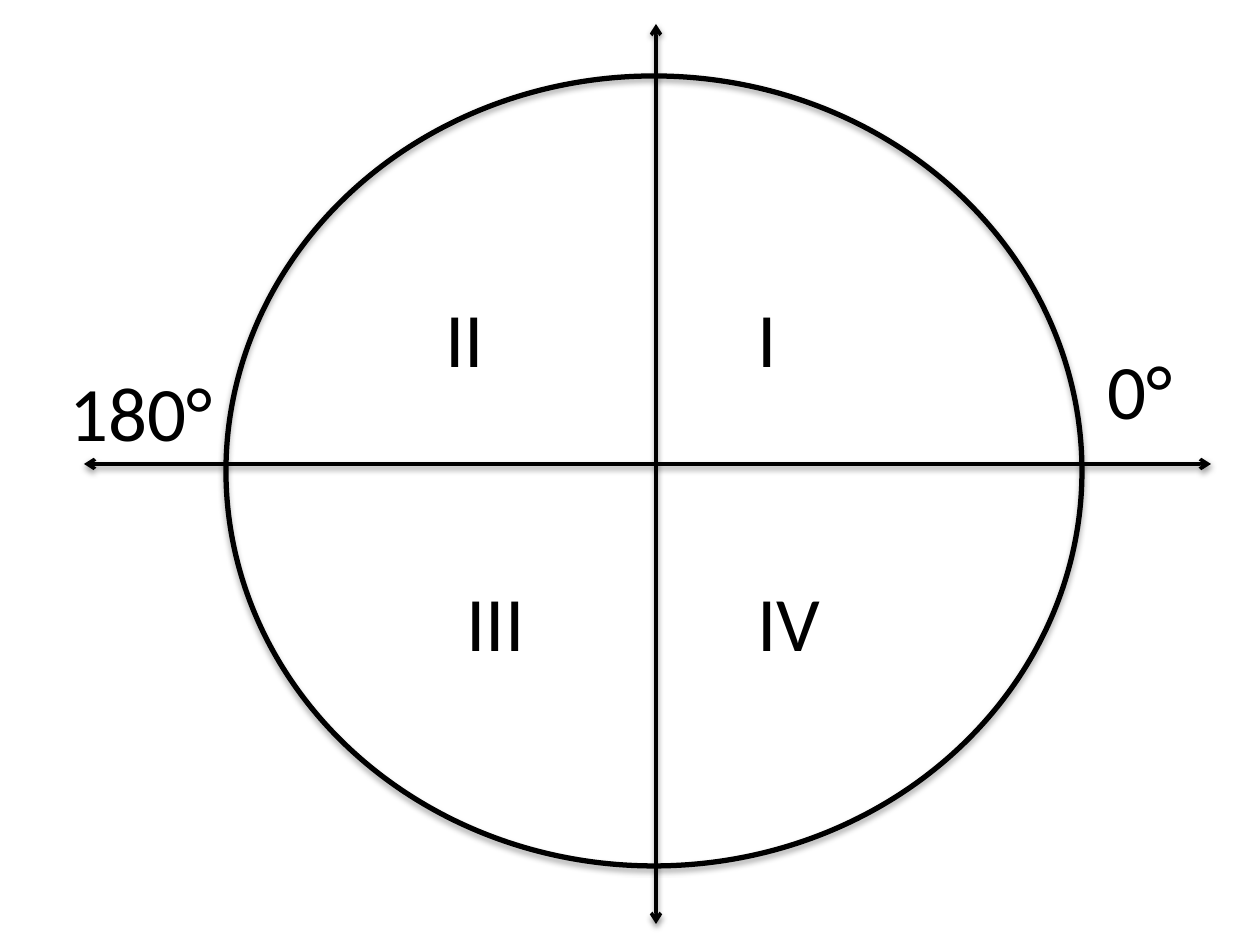
from dataclasses import dataclass

from lxml import etree
from pptx import Presentation
from pptx import util as u
from pptx.dml.color import RGBColor
from pptx.enum import shapes, text
from pptx.oxml.ns import qn

PX = 914400 / 126
BLACK = RGBColor(0, 0, 0)
FONT = "Calibri"
FONT_SIZE = u.Pt(44)
LABEL_HEIGHT = 106


@dataclass
class Axis:
    x1: int
    y1: int
    x2: int
    y2: int


@dataclass
class Label:
    caption: str
    x: int
    y: int
    width: int
    wrap: bool = False


UPPER_ROW, LOWER_ROW = 284, 568
RIGHT_COLUMN = 745

AXES = [Axis(84, 464, 1211, 464), Axis(656, 24, 656, 924)]
LABELS = [
    Label("I", RIGHT_COLUMN, UPPER_ROW, 121, wrap=True),
    Label("II", 433, UPPER_ROW, 64),
    Label("III", 454, LOWER_ROW, 84),
    Label("IV", RIGHT_COLUMN, LOWER_ROW, 89),
    Label("0°", 1095, 336, 91),
    Label("180°", 57, 358, 170),
]


def px(value: int) -> int:
    return round(value * PX)


def add_shadow(sp, distance: float, opacity: int) -> None:
    """Give a line or outline a soft shadow that falls straight down."""
    effects = etree.SubElement(sp._element.spPr, qn("a:effectLst"))
    shadow = etree.SubElement(
        effects, qn("a:outerShdw"), blurRad=str(u.Pt(3.1)),
        dist=str(u.Pt(distance)), dir="5400000", rotWithShape="0")
    color = etree.SubElement(shadow, qn("a:srgbClr"), val=str(BLACK))
    etree.SubElement(color, qn("a:alpha"), val=str(opacity * 1000))


def add_circle(s, x: int, y: int, width: int, height: int) -> None:
    sp = s.shapes.add_shape(shapes.MSO_SHAPE.OVAL, px(x), px(y), px(width), px(height))
    sp.fill.background()
    sp.line.color.rgb = BLACK
    sp.line.width = u.Pt(3)
    add_shadow(sp, 1.8, 35)


def add_axis(s, axis: Axis) -> None:
    sp = s.shapes.add_connector(
        shapes.MSO_CONNECTOR.STRAIGHT,
        px(axis.x1), px(axis.y1), px(axis.x2), px(axis.y2))
    sp.line.color.rgb = BLACK
    sp.line.width = u.Pt(2)
    ln = sp.line._get_or_add_ln()
    for end in ("a:headEnd", "a:tailEnd"):
        etree.SubElement(ln, qn(end), type="arrow")
    add_shadow(sp, 1.6, 38)


def add_label(s, label: Label) -> None:
    sp = s.shapes.add_textbox(
        px(label.x), px(label.y), px(label.width), px(LABEL_HEIGHT))
    tf = sp.text_frame
    tf.word_wrap = label.wrap
    tf.auto_size = text.MSO_AUTO_SIZE.SHAPE_TO_FIT_TEXT
    tf.text = label.caption
    font = tf.paragraphs[0].runs[0].font
    font.name = FONT
    font.size = FONT_SIZE
    font.color.rgb = BLACK


def main() -> None:
    prs = Presentation()
    prs.slide_width, prs.slide_height = px(1260), px(945)
    s = prs.slides.add_slide(prs.slide_layouts[6])

    # Circle and its axes
    add_circle(s, 226, 76, 856, 790)
    for axis in AXES:
        add_axis(s, axis)

    # Quadrant numerals and angles
    for label in LABELS:
        add_label(s, label)

    prs.save("out.pptx")


if __name__ == "__main__":
    main()
